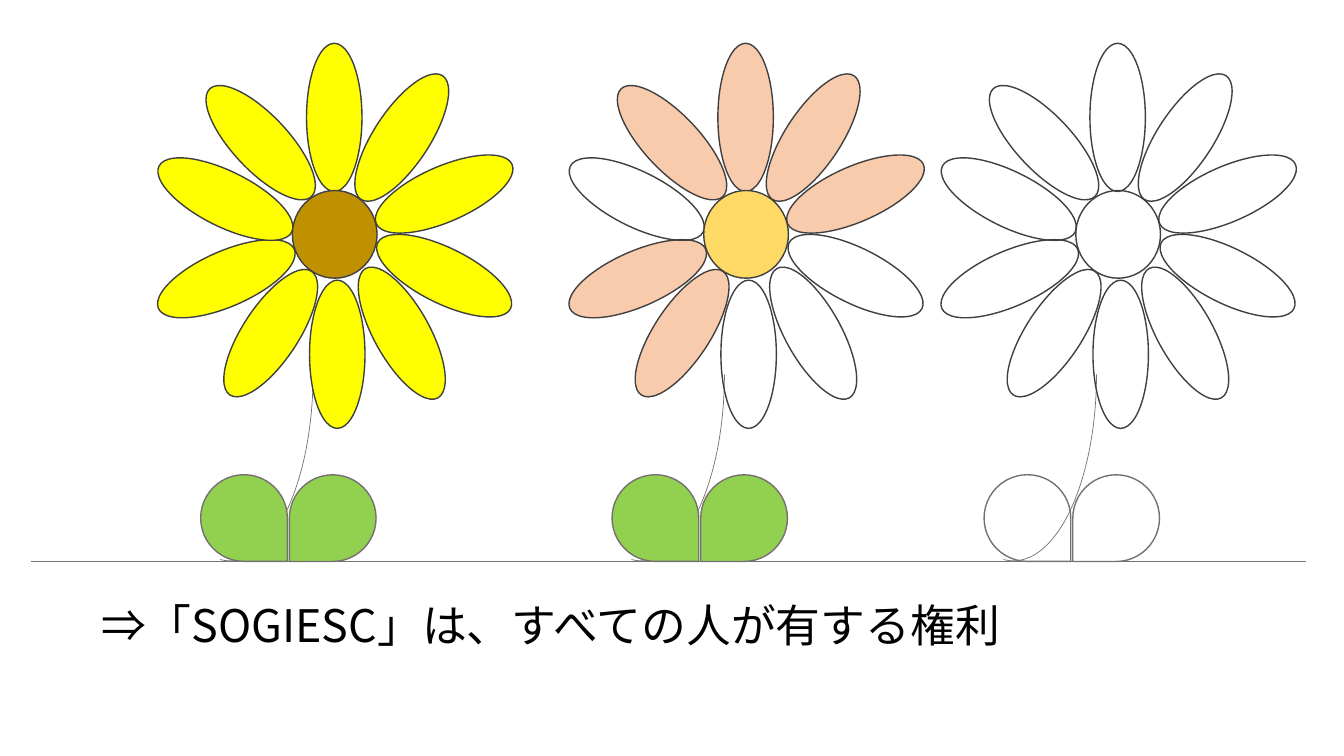
"""Build a slide with three flowers on a ground line above one statement."""
from lxml import etree
from pptx import Presentation
from pptx.dml.color import RGBColor
from pptx.enum.shapes import MSO_CONNECTOR, MSO_SHAPE
from pptx.enum.text import MSO_AUTO_SIZE
from pptx.oxml.ns import qn
from pptx.util import Emu, Pt

ARC, OVAL, TEARDROP = MSO_SHAPE.ARC, MSO_SHAPE.OVAL, MSO_SHAPE.TEAR
STRAIGHT = MSO_CONNECTOR.STRAIGHT
GROW = MSO_AUTO_SIZE.SHAPE_TO_FIT_TEXT

BLACK = RGBColor(0x00, 0x00, 0x00)
OUTLINE = RGBColor(0x40, 0x40, 0x40)
GREY = RGBColor(0x76, 0x71, 0x71)
YELLOW = RGBColor(0xFF, 0xFF, 0x00)
BROWN = RGBColor(0xBF, 0x90, 0x00)
PEACH = RGBColor(0xF8, 0xCB, 0xAD)
GOLD = RGBColor(0xFF, 0xD9, 0x66)
GREEN = RGBColor(0x92, 0xD0, 0x50)

STATEMENT = "⇒「SOGIESC」は、すべての人が有する権利"
FONT = "Noto Sans CJK JP"

# left offset, petal colours clockwise from the top, disc colour, leaf colour
FLOWERS = [
    (0, [YELLOW] * 10, BROWN, GREEN),
    (408, [PEACH] * 3 + [None] * 3 + [PEACH] * 2 + [None, PEACH], GOLD, GREEN),
    (777, [None] * 10, None, None),
]
PETAL_SIZE = (55, 147)
PETALS = [
    (304, 43, 0), (371, 63, 33.4), (413, 119, 66.4), (413, 200, 116.4),
    (371, 257, 150.8), (307, 278, 0), (241, 257, 33.4), (197, 203, 66.4),
    (196, 124, 116.4), (231, 68, 136.7),
]
DISC = (290, 189, 84, 87)
STEM = (43, 289, 370, 165)
STEM_END = 1.819
LEAVES = [(199, 471, 86, 86, 90), (287, 471, 86, 86, 180)]
GROUND = (31, 557, 1295, 557)
STATEMENT_BOX = (91, 588, 1048, 64)


def px(length):
    return Emu(length * 9144)


def add_part(slide, preset, box, offset, fill, line, weight=1, rotation=0):
    left, top, width, height = box
    part = slide.shapes.add_shape(
        preset, px(left + offset), px(top), px(width), px(height))
    part.shadow.inherit = False
    part.rotation = rotation
    if fill is None:
        part.fill.background()
    else:
        part.fill.solid()
        part.fill.fore_color.rgb = fill
    part.line.color.rgb = line
    part.line.width = Pt(weight)
    return part


def add_flower(slide, offset, petal_colours, disc_colour, leaf_colour):
    stem = add_part(slide, ARC, STEM, offset, None, GREY, 0.5, 90)
    stem.adjustments[1] = STEM_END
    for (left, top, angle), colour in zip(PETALS, petal_colours):
        add_part(slide, OVAL, (left, top, *PETAL_SIZE), offset, colour,
                 OUTLINE, rotation=angle)
    add_part(slide, OVAL, DISC, offset, disc_colour, OUTLINE)
    for *box, angle in LEAVES:
        add_part(slide, TEARDROP, box, offset, leaf_colour, GREY,
                 rotation=angle)


def add_ground(slide):
    ground = slide.shapes.add_connector(STRAIGHT, *map(px, GROUND))
    ground.line.color.rgb = GREY
    ground.line.width = Pt(0.5)
    etree.SubElement(ground._element.spPr, qn("a:effectLst"))


def add_statement(slide):
    frame = slide.shapes.add_textbox(*map(px, STATEMENT_BOX)).text_frame
    frame.word_wrap = True
    frame.auto_size = GROW
    run = frame.paragraphs[0].add_run()
    run.text = STATEMENT
    run.font.size = Pt(32)
    run.font.color.rgb = BLACK
    run.font.name = FONT
    etree.SubElement(run.font._element, qn("a:ea"), typeface=FONT)


def main():
    deck = Presentation()
    deck.slide_width, deck.slide_height = px(1333), px(750)
    slide = deck.slides.add_slide(deck.slide_layouts[6])
    add_ground(slide)
    for flower in FLOWERS:
        add_flower(slide, *flower)
    add_statement(slide)
    deck.save("out.pptx")


if __name__ == "__main__":
    main()
